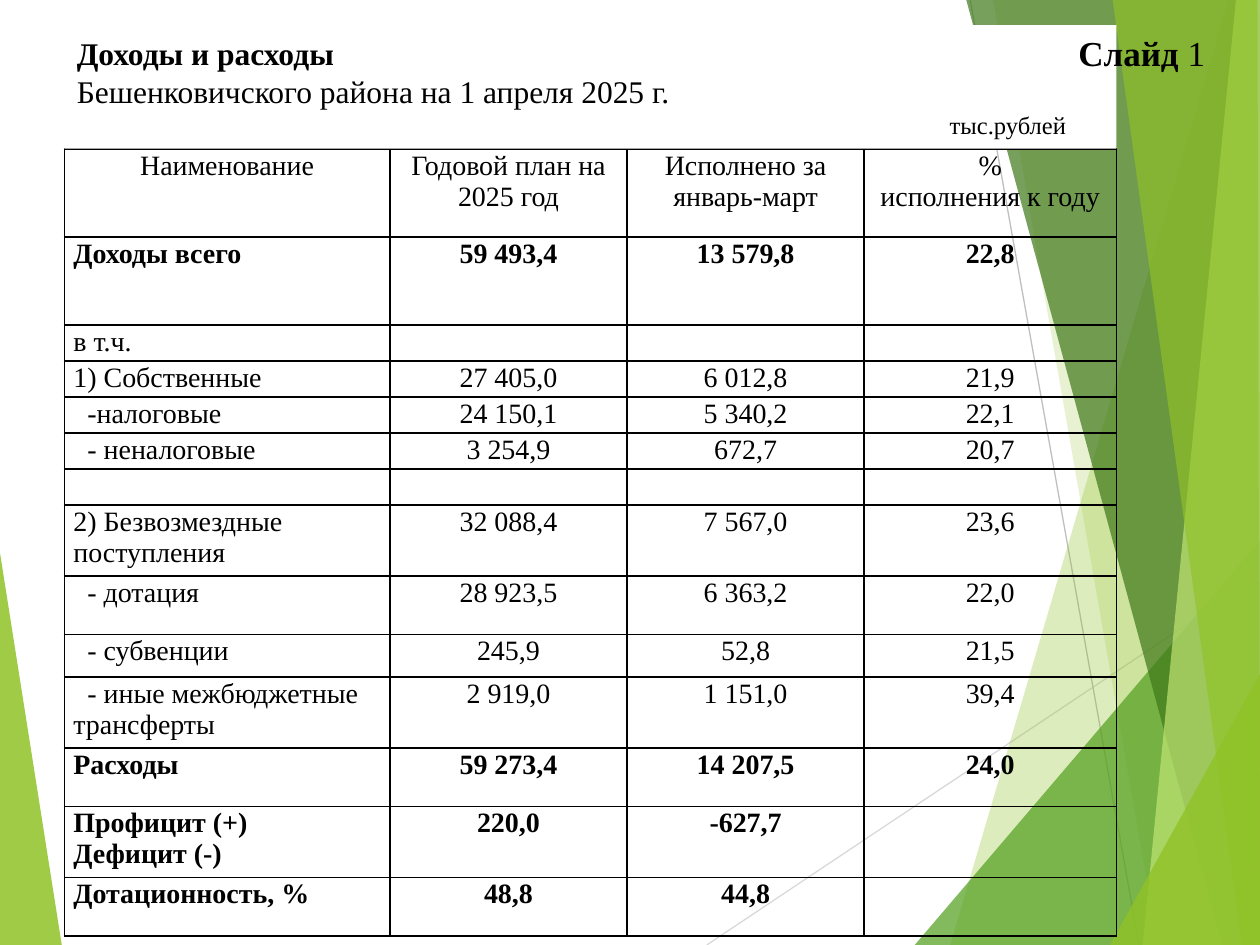
import lxml.etree
import pptx
import pptx.dml.color
import pptx.enum.shapes
import pptx.enum.text
import pptx.oxml.ns
import pptx.util

Pt = pptx.util.Pt
qn = pptx.oxml.ns.qn
ALIGN = pptx.enum.text.PP_ALIGN
FONT = "Times New Roman"
TABLE_SIZE = 16
WIDTH, HEIGHT = 720, 540
LEFT, TABLE_TOP = 36.8, 85.2
COLORS = {
    "black": "000000", "white": "FFFFFF",
    "lime": "90C226", "green": "54A021", "forest": "3F7819", "pale": "C0E474",
    "light gray": "D9D9D9", "gray": "BFBFBF",
}

RAYS = [
    ((403.9, 540), (720, 329), "light gray"),
    ((554.4, 0), (650.9, 540), "gray"),
]
FACETS = [
    ("lime", 85, [(0, 316), (35.3, 540), (0, 540)]),
    ("lime", 30, [(702, 0), (543, 540), (720, 540), (720, 0)]),
    ("lime", 20, [(567.4, 0), (661.7, 540), (720, 540), (720, 0)]),
    ("green", 72, [(522.7, 540), (720, 308.9), (720, 540)]),
    ("forest", 70, [(552.2, 0), (698.4, 540), (720, 540), (720, 0)]),
    ("pale", 70, [(706.3, 0), (653, 540), (720, 540), (720, 0)]),
    ("lime", 65, [(635.8, 0), (709.9, 540), (720, 540), (718.6, 0)]),
    ("lime", 80, [(634.3, 540), (720, 385.2), (720, 540)]),
]

COLUMN_WIDTHS = [186, 135.6, 135.4, 144.2]
# Row height, bold, cell texts; a name starting with "-" is a sub-item.
BUDGET = [
    (50.3, False, ["Наименование", "Годовой план на 2025 год",
                   "Исполнено за январь-март", "%\nисполнения к году"]),
    (50.3, True, ["Доходы всего", "59 493,4", "13 579,8", "22,8"]),
    (20.6, False, ["в т.ч.", "", "", ""]),
    (20.6, False, ["1) Собственные", "27 405,0", "6 012,8", "21,9"]),
    (20.6, False, ["-налоговые", "24 150,1", "5 340,2", "22,1"]),
    (20.6, False, ["- неналоговые", "3 254,9", "672,7", "20,7"]),
    (20.6, False, ["", "", "", ""]),
    (40.6, False, ["2) Безвозмездные поступления", "32 088,4", "7 567,0", "23,6"]),
    (33.4, False, ["- дотация", "28 923,5", "6 363,2", "22,0"]),
    (24.1, False, ["- субвенции", "245,9", "52,8", "21,5"]),
    (40.6, False, ["- иные межбюджетные трансферты", "2 919,0", "1 151,0", "39,4"]),
    (33.4, True, ["Расходы", "59 273,4", "14 207,5", "24,0"]),
    (40.6, True, ["Профицит (+)\nДефицит (-)", "220,0", "-627,7", ""]),
    (33.4, True, ["Дотационность, %", "48,8", "44,8", ""]),
]


def rgb(color):
    return pptx.dml.color.RGBColor.from_string(COLORS[color])


def write(paragraph, text, size=TABLE_SIZE, bold=False, align=ALIGN.LEFT, indent=0):
    """Append a run to the paragraph; empty text only sets the line's size."""
    paragraph.alignment = align
    if indent:
        paragraph._p.get_or_add_pPr().set("indent", str(Pt(indent)))
    if not text:
        lxml.etree.SubElement(paragraph._p, qn("a:endParaRPr"), sz=str(size * 100))
        return
    run = paragraph.add_run()
    run.text = text
    run.font.name = FONT
    run.font.size = Pt(size)
    run.font.bold = bold
    run.font.color.rgb = rgb("black")


def add_ray(slide, start, end, color):
    ray = slide.shapes.add_connector(
        pptx.enum.shapes.MSO_CONNECTOR.STRAIGHT, *map(Pt, start + end))
    ray.line.color.rgb = rgb(color)
    ray.line.width = Pt(0.75)
    lxml.etree.SubElement(ray._element.spPr, qn("a:effectLst"))


def add_facet(slide, color, opacity, corners):
    points = [(Pt(x), Pt(y)) for x, y in corners]
    outline = slide.shapes.build_freeform(*points[0], scale=1.0)
    outline.add_line_segments(points[1:], close=True)
    facet = outline.convert_to_shape()
    facet.shadow.inherit = False
    facet.line.fill.background()
    facet.fill.solid()
    facet.fill.fore_color.rgb = rgb(color)
    tint = facet._element.spPr.find(qn("a:solidFill"))[0]
    lxml.etree.SubElement(tint, qn("a:alpha"), val=str(opacity * 1000))


def add_borders(cell):
    properties = cell._tc.get_or_add_tcPr()
    for position, side in enumerate(("a:lnL", "a:lnR", "a:lnT", "a:lnB")):
        border = lxml.etree.Element(qn(side), w=str(Pt(1)))
        fill = lxml.etree.SubElement(border, qn("a:solidFill"))
        lxml.etree.SubElement(fill, qn("a:srgbClr"), val=COLORS["black"])
        properties.insert(position, border)


def fill_cell(cell, text, bold, align):
    cell.margin_left = cell.margin_right = Pt(5.2)
    cell.margin_top, cell.margin_bottom = Pt(0.7), 0
    cell.fill.background()
    add_borders(cell)
    frame = cell.text_frame
    indent = 8 if align == ALIGN.LEFT and text.startswith("-") else 0
    for number, line in enumerate(text.split("\n")):
        paragraph = frame.add_paragraph() if number else frame.paragraphs[0]
        write(paragraph, line, bold=bold, align=align, indent=indent)


def add_budget_table(slide):
    heights = [height for height, _, _ in BUDGET]
    table = slide.shapes.add_table(
        len(BUDGET), len(COLUMN_WIDTHS), Pt(LEFT), Pt(TABLE_TOP),
        Pt(sum(COLUMN_WIDTHS)), Pt(sum(heights))).table
    table.first_row = table.horz_banding = False
    for column, width in zip(table.columns, COLUMN_WIDTHS):
        column.width = Pt(width)
    for row_number, (height, bold, texts) in enumerate(BUDGET):
        table.rows[row_number].height = Pt(height)
        for column_number, text in enumerate(texts):
            is_name = row_number > 0 and column_number == 0
            fill_cell(table.cell(row_number, column_number), text, bold,
                      ALIGN.LEFT if is_name else ALIGN.CENTER)


def add_heading(slide):
    heading = slide.shapes.add_shape(
        pptx.enum.shapes.MSO_SHAPE.RECTANGLE,
        Pt(LEFT), Pt(14.4), Pt(sum(COLUMN_WIDTHS)), Pt(70.6))
    heading.shadow.inherit = False
    heading.line.fill.background()
    heading.fill.solid()
    heading.fill.fore_color.rgb = rgb("white")
    frame = heading.text_frame
    frame.word_wrap = True
    frame.vertical_anchor = pptx.enum.text.MSO_ANCHOR.MIDDLE
    frame.margin_right = Pt(28.8)
    write(frame.paragraphs[0], "Доходы и расходы", size=18, bold=True)
    write(frame.add_paragraph(), "Бешенковичского района на 1 апреля 2025 г.", size=18)
    write(frame.add_paragraph(), "тыс.рублей", size=14, align=ALIGN.RIGHT)


def add_slide_label(slide):
    label = slide.shapes.add_textbox(Pt(609.1), Pt(14.4), Pt(96.5), Pt(31.5))
    label.text_frame.word_wrap = True
    paragraph = label.text_frame.paragraphs[0]
    write(paragraph, "Слайд", size=20, bold=True)
    write(paragraph, " 1", size=20)


def main():
    deck = pptx.Presentation()
    deck.slide_width, deck.slide_height = Pt(WIDTH), Pt(HEIGHT)
    slide = deck.slides.add_slide(deck.slide_layouts[6])
    left_facet, *right_facets = FACETS
    add_facet(slide, *left_facet)
    for ray in RAYS:
        add_ray(slide, *ray)
    for facet in right_facets:
        add_facet(slide, *facet)
    add_budget_table(slide)
    add_heading(slide)
    add_slide_label(slide)
    deck.save("out.pptx")


if __name__ == "__main__":
    main()
